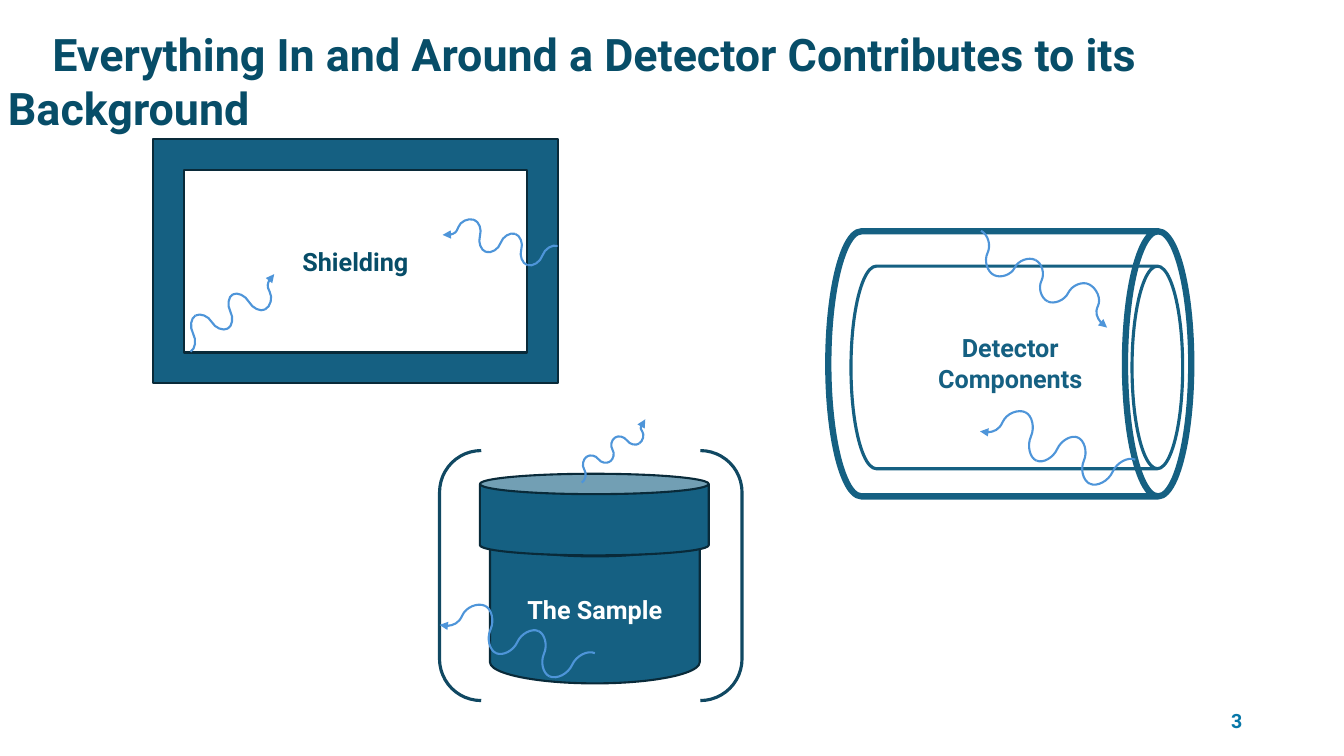
from dataclasses import dataclass
from math import cos, radians, sin
from itertools import pairwise

from lxml.etree import SubElement
from pptx import Presentation
from pptx.dml.color import RGBColor
from pptx.enum.shapes import MSO_CONNECTOR, MSO_SHAPE
from pptx.enum.text import MSO_ANCHOR, MSO_AUTO_SIZE, PP_ALIGN
from pptx.oxml.ns import qn
from pptx.util import Inches, Pt


@dataclass(frozen=True)
class Theme:
    font: str = "Roboto"
    title: str = "074D68"
    body: str = "156082"
    edge: str = "092A39"
    bracket: str = "104862"
    ray: str = "4E95D9"
    number: str = "0777A8"
    light: str = "FFFFFF"
    title_size: int = 32
    label_size: int = 18
    number_size: int = 14
    thin: float = 1.5
    medium: float = 2.25
    thick: float = 4.5


class SlideBuilder:
    def __init__(self, page, theme):
        self.page = page
        self.theme = theme
        self.shapes = page.shapes

    def start_group(self):
        self.shapes = self.page.shapes.add_group_shape().shapes

    def end_group(self):
        self.shapes = self.page.shapes

    def fill_text(self, frame, lines, size, color, align, anchor=MSO_ANCHOR.TOP, indent=0):
        frame.word_wrap = True
        frame.vertical_anchor = anchor
        font_format = {"name": self.theme.font, "size": Pt(size), "bold": True}
        for index, line in enumerate(lines):
            para = frame.paragraphs[0] if index == 0 else frame.add_paragraph()
            para.alignment = align
            if indent:
                para._p.get_or_add_pPr().set("indent", str(Inches(indent)))
            span = para.add_run()
            span.text = line
            for name, value in font_format.items():
                setattr(span.font, name, value)
            span.font.color.rgb = RGBColor.from_string(color)

    def text(self, place, lines, size, color, align, grow=True, **layout):
        box = self.shapes.add_textbox(*map(Inches, place))
        self.fill_text(box.text_frame, lines, size, color, align, **layout)
        if grow:
            box.text_frame.auto_size = MSO_AUTO_SIZE.SHAPE_TO_FIT_TEXT

    def shape(self, kind, place, line, width, fill=None, rotation=0, label=None, ink=None):
        shape = self.shapes.add_shape(kind, *map(Inches, place))
        shape.shadow.inherit = False
        shape.rotation = rotation
        if fill:
            shape.fill.solid()
            shape.fill.fore_color.rgb = RGBColor.from_string(fill)
        else:
            shape.fill.background()
        shape.line.color.rgb = RGBColor.from_string(line)
        shape.line.width = Pt(width)
        if label:
            self.fill_text(shape.text_frame, [label], self.theme.label_size, ink,
                           PP_ALIGN.CENTER, MSO_ANCHOR.MIDDLE)

    def curve(self, start, end, angle, arrow):
        (x1, y1), (x2, y2) = start, end
        turn = radians(-angle)
        across = ((x2 - x1) * cos(turn) - (y2 - y1) * sin(turn)) / 2
        down = ((x2 - x1) * sin(turn) + (y2 - y1) * cos(turn)) / 2
        x, y = (x1 + x2) / 2, (y1 + y2) / 2
        corners = (x - across, y - down, x + across, y + down)
        curve = self.shapes.add_connector(MSO_CONNECTOR.CURVE, *map(Inches, corners))
        curve.line.color.rgb = RGBColor.from_string(self.theme.ray)
        curve.line.width = Pt(self.theme.thin)
        properties = curve.element.spPr
        properties.find(qn("a:xfrm")).set("rot", str(angle * 60000))
        if arrow:
            SubElement(properties.find(qn("a:ln")), qn("a:tailEnd")).set("type", "triangle")
        SubElement(properties, qn("a:effectLst"))

    def ray(self, angle, points):
        for start, end in pairwise(points):
            self.curve(start, end, angle, arrow=end == points[-1])


def main():
    deck = Presentation()
    deck.slide_width, deck.slide_height = Inches(13.33), Inches(7.5)
    theme = Theme()
    page = deck.slides.add_slide(deck.slide_layouts[6])
    slide = SlideBuilder(page, theme)

    slide.text((-0.02, 0.22, 13.35, 0.64),
               ["Everything In and Around a Detector Contributes to its Background"],
               theme.title_size, theme.title, PP_ALIGN.LEFT, indent=0.44)
    slide.shape(MSO_SHAPE.DOUBLE_BRACKET, (4.36, 4.47, 3, 2.48), theme.bracket, theme.medium)

    slide.start_group()
    slide.shape(MSO_SHAPE.FRAME, (1.52, 1.38, 4.01, 2.42), theme.edge, theme.thin,
                fill=theme.body, label="Shielding", ink=theme.title)
    slide.ray(331, [(1.89, 3.49), (1.94, 3.13), (2.26, 3.26),
                    (2.31, 2.92), (2.63, 3.07), (2.72, 2.72)])
    slide.ray(198, [(5.53, 2.44), (5.23, 2.63), (5.11, 2.32),
                    (4.82, 2.5), (4.7, 2.18), (4.39, 2.33)])

    slide.start_group()
    for place, width in (((8.7, 1.81, 2.63, 3.6), theme.thick),
                         ((9.08, 2, 2.01, 3.29), theme.medium)):
        slide.shape(MSO_SHAPE.CAN, place, theme.body, width, rotation=90)
    slide.text((9.06, 3.25, 1.92, 0.71), ["Detector", "Components"],
               theme.label_size, theme.body, PP_ALIGN.CENTER)
    slide.ray(26, [(9.73, 2.29), (9.86, 2.73), (10.27, 2.58),
                   (10.39, 2.99), (10.8, 2.82), (10.98, 3.25)])
    slide.ray(204, [(11.26, 4.56), (10.81, 4.8), (10.69, 4.34),
                    (10.28, 4.57), (10.17, 4.09), (9.72, 4.28)])

    slide.start_group()
    slide.shape(MSO_SHAPE.CAN, (4.86, 5.1, 2.08, 1.68), theme.edge, theme.thin,
                fill=theme.body, label="The Sample", ink=theme.light)
    slide.shape(MSO_SHAPE.CAN, (4.76, 4.7, 2.27, 0.81), theme.edge, theme.thin,
                fill=theme.body)
    slide.ray(326, [(5.77, 4.79), (5.82, 4.53), (6.05, 4.58),
                    (6.1, 4.34), (6.34, 4.4), (6.4, 4.16)])
    slide.ray(204, [(5.9, 6.48), (5.45, 6.71), (5.34, 6.26),
                    (4.92, 6.48), (4.81, 6.01), (4.36, 6.2)])

    slide.end_group()
    slide.text((9.42, 6.95, 3, 0.4), ["3"], theme.number_size, theme.number,
               PP_ALIGN.RIGHT, grow=False, anchor=MSO_ANCHOR.MIDDLE)
    deck.save("out.pptx")


if __name__ == "__main__":
    main()
